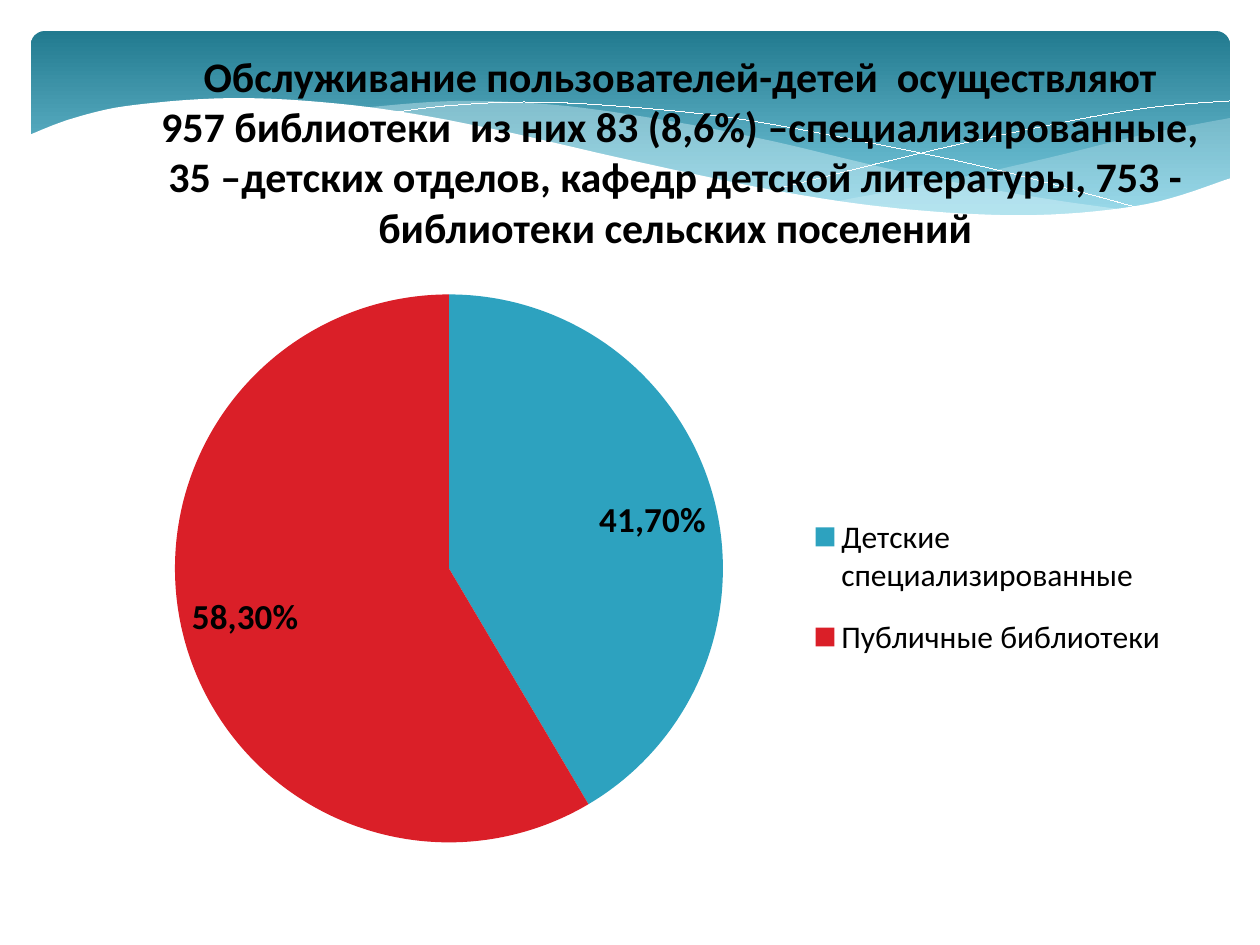
from dataclasses import dataclass

from lxml import etree
from pptx import Presentation
from pptx import util as u
from pptx.chart.data import CategoryChartData
from pptx.dml.color import RGBColor
from pptx.enum import chart as charts, shapes, text
from pptx.oxml.ns import qn

PX = 914400 / 126
FINE = 10


@dataclass(frozen=True)
class Theme:
    font: str = "Calibri"
    ink: str = "000000"
    white: str = "FFFFFF"
    mist: str = "DEF5FA"
    banner_top: str = "227A8F"
    banner_bottom: str = "7ACBE0"
    slices: tuple = ("2DA2BF", "DA1F28")
    title: int = 24
    label: int = 20
    legend: int = 18
    hairline: float = 0.01


def px(*values):
    return [u.Emu(round(v * PX)) for v in values]


def smooth(knots, steps=8):
    padded = [knots[0], *knots, knots[-1]]
    points = [knots[0]]
    for a, b, c, d in zip(padded, padded[1:], padded[2:], padded[3:]):
        for i in range(1, steps + 1):
            t = i / steps
            points.append(tuple(
                (2 * q + (r - p) * t + (2 * p - 5 * q + 4 * r - s) * t ** 2
                 + (3 * q - p - 3 * r + s) * t ** 3) / 2
                for p, q, r, s in zip(a, b, c, d)))
    return points


class Painter:
    def __init__(self, slide, theme):
        self.s = slide
        self.theme = theme

    def style(self, font, size, bold=False):
        font.name = self.theme.font
        font.size = u.Pt(size)
        font.bold = bold
        font.color.rgb = RGBColor.from_string(self.theme.ink)

    def banner(self, x, y, w, h):
        sp = self.s.shapes.add_shape(shapes.MSO_SHAPE.ROUNDED_RECTANGLE, *px(x, y, w, h))
        sp.shadow.inherit = False
        sp.adjustments[0] = 0.07
        sp.line.fill.background()
        sp.fill.gradient()
        sp.fill.gradient_angle = 270
        colors = self.theme.banner_top, self.theme.banner_bottom
        for stop, color, position in zip(sp.fill.gradient_stops, colors, (0, 0.9)):
            stop.color.rgb = RGBColor.from_string(color)
            stop.position = position

    def freeform(self, points, closed):
        points = [(round(x * FINE), round(y * FINE)) for x, y in points]
        builder = self.s.shapes.build_freeform(*points[0], scale=PX / FINE)
        builder.add_line_segments(points[1:], close=closed)
        sp = builder.convert_to_shape()
        sp.shadow.inherit = False
        return sp

    def wave(self, edges, color, opacity=100):
        sp = self.freeform([point for edge in edges for point in smooth(edge)], True)
        sp.line.fill.background()
        sp.fill.solid()
        sp.fill.fore_color.rgb = RGBColor.from_string(color)
        if opacity < 100:
            clr = sp._element.spPr.find(qn("a:solidFill"))[0]
            etree.SubElement(clr, qn("a:alpha")).set("val", str(opacity * 1000))

    def curve(self, knots, color):
        sp = self.freeform(smooth(knots), False)
        sp.fill.background()
        sp.line.color.rgb = RGBColor.from_string(color)
        sp.line.width = u.Pt(self.theme.hairline)

    def pie(self, x, y, w, h, slices, plot, legend):
        data = CategoryChartData(number_format="0.00%")
        data.categories = [name for name, _, _ in slices]
        data.add_series("Series 1", [value for _, value, _ in slices])
        chart = self.s.shapes.add_chart(
            charts.XL_CHART_TYPE.PIE, *px(x, y, w, h), data).chart
        self.style(chart.font, self.theme.legend)
        chart.has_title = False
        chart.has_legend = True
        chart.legend.position = charts.XL_LEGEND_POSITION.RIGHT
        chart.legend.include_in_layout = False
        chart.plots[0].vary_by_categories = True
        series = chart.plots[0].series[0]
        labels = series.data_labels
        labels.show_value = True
        labels.number_format = "0.00%"
        labels.number_format_is_linked = False
        self.style(labels.font, self.theme.label, True)
        for i, (_, _, caption) in enumerate(slices):
            point = series.points[i]
            point.format.fill.solid()
            point.format.fill.fore_color.rgb = RGBColor.from_string(self.theme.slices[i])
            tf = point.data_label.text_frame
            tf.text = caption
            self.style(tf.paragraphs[0].runs[0].font, self.theme.label, True)
            point.data_label.position = charts.XL_LABEL_POSITION.INSIDE_END
        self.place(chart._chartSpace.chart.plotArea, 0, plot, (w, h), inner=True)
        self.place(chart.legend._element, 1, legend, (w, h))

    def place(self, part, index, box, size, inner=False):
        for old in part.findall(qn("c:layout")):
            part.remove(old)
        layout = etree.Element(qn("c:layout"))
        part.insert(index, layout)
        manual = etree.SubElement(layout, qn("c:manualLayout"))
        settings = [("layoutTarget", "inner")] if inner else []
        settings += [("xMode", "edge"), ("yMode", "edge")]
        settings += [(tag, v / total) for tag, v, total in zip("xywh", box, size * 2)]
        for tag, value in settings:
            etree.SubElement(manual, qn(f"c:{tag}")).set("val", str(value))

    def title(self, x, y, w, h, lines):
        tf = self.s.shapes.add_textbox(*px(x, y, w, h)).text_frame
        tf.word_wrap = True
        tf.auto_size = text.MSO_AUTO_SIZE.SHAPE_TO_FIT_TEXT
        tf.text = "\n".join(lines)
        for p in tf.paragraphs:
            p.alignment = text.PP_ALIGN.CENTER
            for r in p.runs:
                self.style(r.font, self.theme.title, True)


def main():
    prs = Presentation()
    prs.slide_width, prs.slide_height = px(1260, 945)
    theme = Theme()
    painter = Painter(prs.slides.add_slide(prs.slide_layouts[6]), theme)

    painter.banner(31, 31, 1199, 197)
    painter.wave([
        [(1230, 118), (1142, 135), (1048, 158), (949, 180), (833, 202)],
        [(833, 202), (905, 210), (984, 217), (1052, 217), (1120, 209),
         (1178, 197), (1230, 178)],
    ], theme.mist, 29)
    painter.wave([
        [(1125, 210), (1017, 194), (890, 169), (772, 141), (664, 120),
         (556, 105), (455, 101), (360, 108)],
        [(360, 108), (456, 122), (566, 146), (713, 180), (819, 199),
         (927, 213), (1031, 218), (1125, 210)],
    ], theme.mist, 40)
    painter.curve([(389, 113), (445, 106), (524, 102), (616, 106), (733, 118),
                   (876, 144), (1002, 171), (1143, 209)], theme.white)
    painter.curve([(772, 190), (876, 164), (978, 140), (1091, 117),
                   (1164, 106), (1229, 101)], theme.white)
    painter.wave([
        [(1231, 178), (1147, 204), (1037, 215), (915, 210), (789, 193), (634, 161),
         (493, 129), (368, 107), (243, 98), (134, 105), (74, 118), (29, 135)],
        [(29, 282), (1231, 282)],
    ], theme.white)
    painter.pie(115, 294, 1062, 586, [
        ("Детские специализированные", 0.415, "41,70%"),
        ("Публичные библиотеки", 0.585, "58,30%"),
    ], plot=(60, 0, 548, 549), legend=(690, 200, 366, 186))
    painter.title(145, 44, 1070, 267, [
        "Обслуживание пользователей-детей  осуществляют",
        "957 библиотеки  из них 83 (8,6%) –специализированные, 35 –детских отделов, "
        "кафедр детской литературы, 753 -  библиотеки сельских поселений ",
    ])
    prs.save("out.pptx")


if __name__ == "__main__":
    main()
